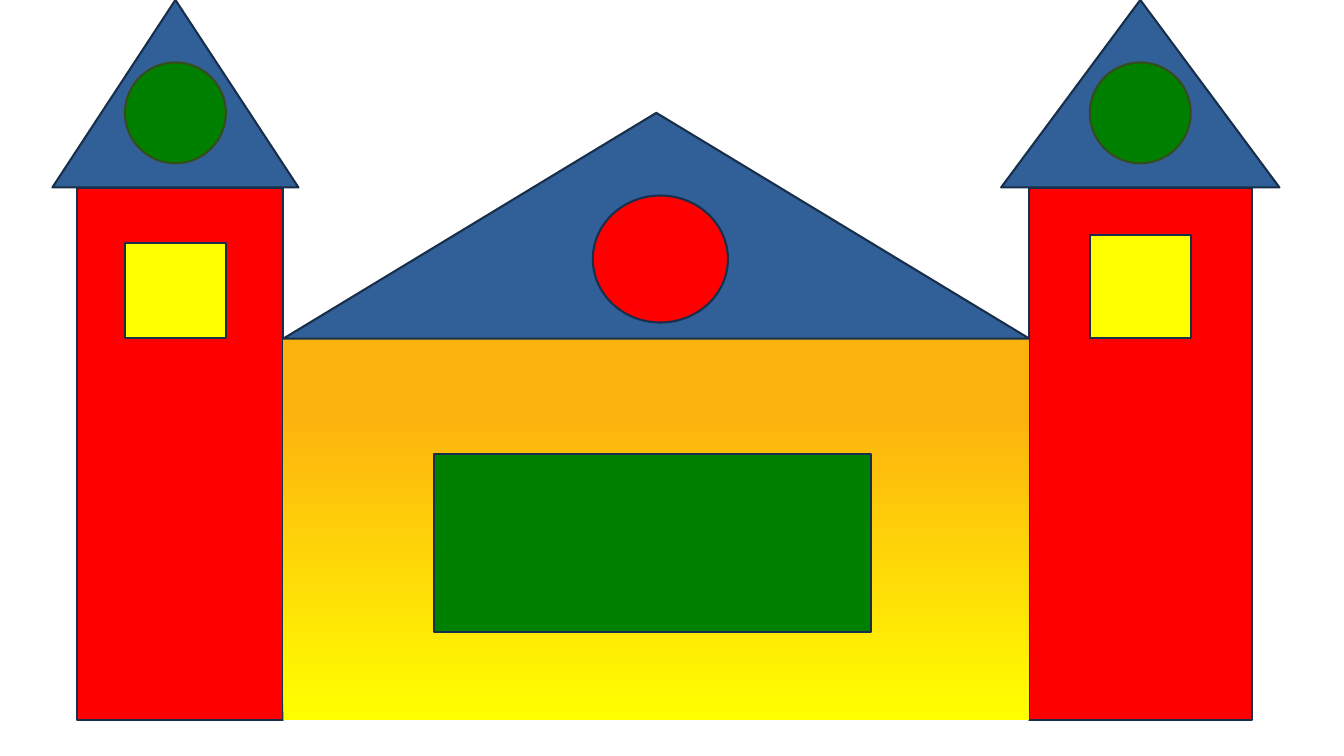
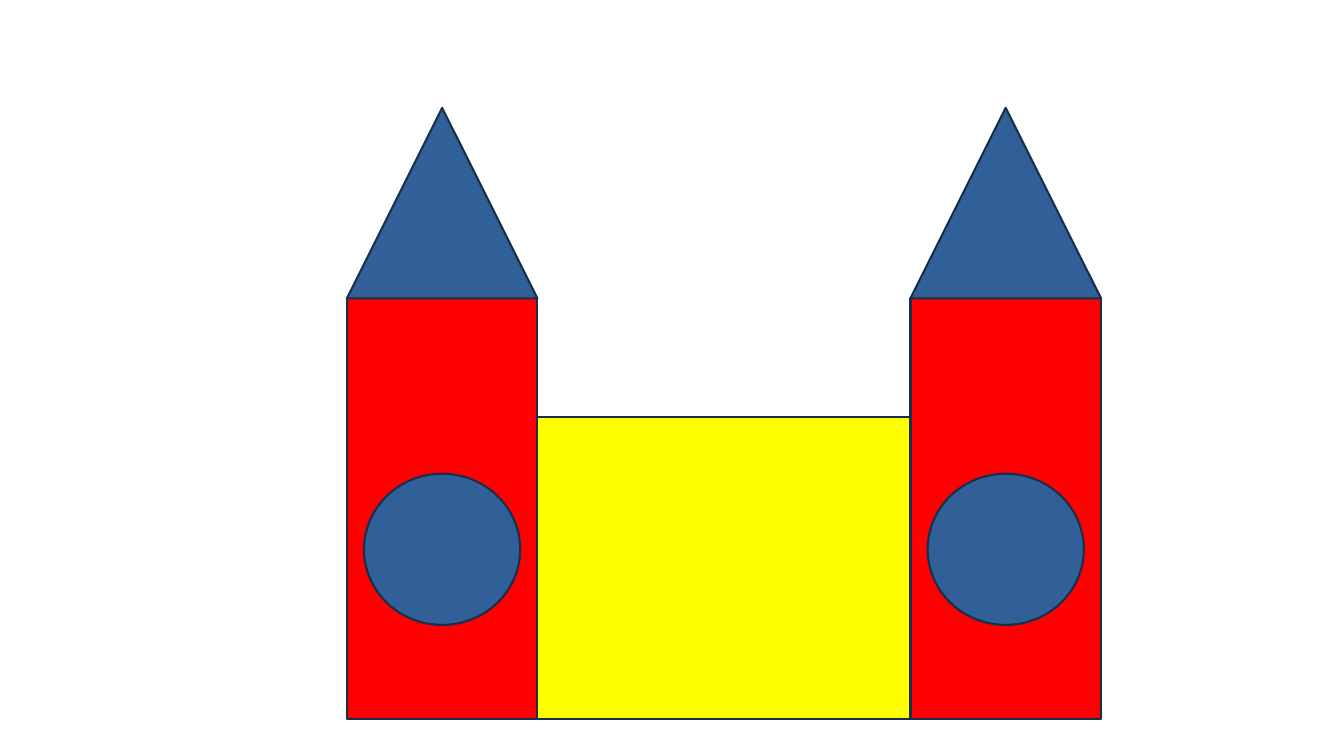
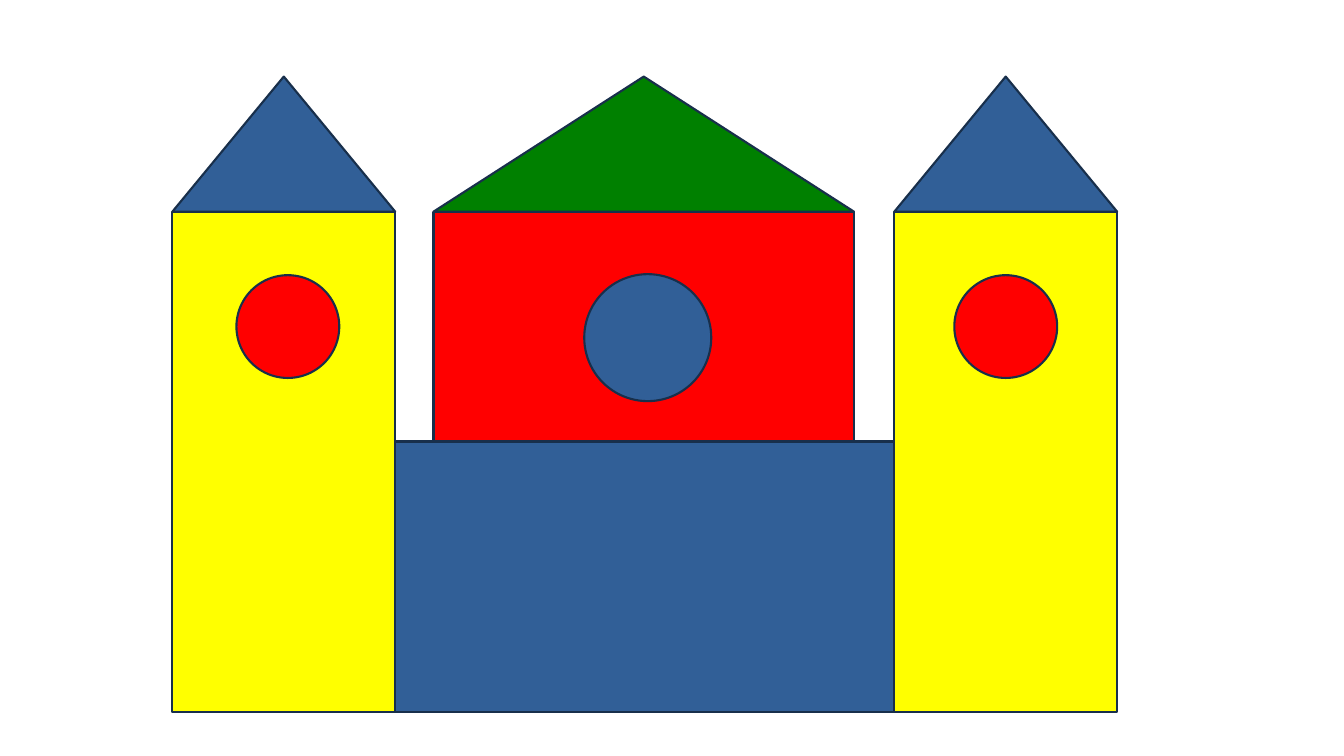
import copy
from dataclasses import dataclass

import pptx
import pptx.dml.color
import pptx.enum.shapes
import pptx.oxml.ns
import pptx.util
from pptx.util import Inches

KINDS = pptx.enum.shapes.MSO_SHAPE
BLOCK, ROOF, DISC = KINDS.RECTANGLE, KINDS.ISOSCELES_TRIANGLE, KINDS.OVAL


@dataclass(frozen=True)
class Theme:
    red: str = "FF0000"
    yellow: str = "FFFF00"
    blue: str = "315F97"
    green: str = "008000"
    outline: str = "182F4B"
    green_outline: str = "344D1B"
    line_width: float = 1.5
    # (position in percent, colour), from the ground upwards
    sunset: tuple = ((0, "FFFF00"), (80, "FDB30E"), (100, "FFB40E"))


T = Theme()


@dataclass
class Building:
    """A wall standing on the ground, with an optional roof and openings."""
    left: float
    width: float
    top: float
    base: float
    wall: object
    roof: tuple = ()       # colour, top, width
    axis: float = None     # centre of the roof and openings
    openings: tuple = ()   # kind, colour, shift from axis, top, width, height
    wall_line: str = T.outline


def wide_castle():
    ground, eaves = 7.14, 1.86
    disc = (DISC, T.green, 0, 0.62, 1, 1, T.green_outline)
    left = Building(0.76, 2.05, eaves, ground, T.red, (T.blue, 0, 2.44), 1.74,
                    (disc, (BLOCK, T.yellow, 0, 2.41, 1, 0.94)))
    right = Building(10.21, 2.21, eaves, ground, T.red, (T.blue, 0, 2.76), 11.31,
                     (disc, (BLOCK, T.yellow, 0, 2.33, 1, 1.02)))
    hall = between(left, right, 3.36, T.sunset, wall_line=None,
                   roof=(T.blue, 1.12, 7.4),
                   openings=((DISC, T.red, 0.04, 1.94, 1.34, 1.26),
                             (BLOCK, T.green, -0.04, 4.5, 4.33, 1.77)))
    return [left, right, hall]


def gate_castle():
    left, right = [Building(x, 1.89, 2.96, 7.13, T.red, (T.blue, 1.07, 1.89),
                            openings=((DISC, T.blue, 0, 4.7, 1.55, 1.5),))
                   for x in (3.44, 9.03)]
    return [left, between(left, right, 4.14, T.yellow), right]


def keep_castle():
    eaves, peak, terrace = 2.1, 0.76, 4.38
    left, right = [Building(x, 2.21, eaves, 7.06, T.yellow, (T.blue, peak, 2.21),
                            openings=((DISC, T.red, shift, 2.73, 1.02, 1.02),))
                   for x, shift in ((1.71, 0.04), (8.87, 0))]
    hall = between(left, right, terrace, T.blue)
    keep = Building(4.3, 4.17, eaves, terrace, T.red, (T.green, peak, 4.17),
                    openings=((DISC, T.blue, 0.04, 2.72, 1.26, 1.26),))
    return [hall, keep, left, right]


def between(left, right, top, wall, **extras):
    """A building that fills the gap between two towers."""
    start = left.left + left.width
    return Building(start, right.left - start, top, left.base, wall, **extras)


def rgb(value):
    return pptx.dml.color.RGBColor.from_string(value)


def fill_upwards(sp, stops):
    """Gradient from bottom to top with any number of stops."""
    sp.fill.gradient()
    sp.fill.gradient_angle = 90
    gs_list = sp._element.spPr.find(".//" + pptx.oxml.ns.qn("a:gsLst"))
    while len(gs_list) < len(stops):
        gs_list.append(copy.deepcopy(gs_list[-1]))
    for stop, (percent, colour) in zip(sp.fill.gradient_stops, stops):
        stop.position = percent / 100
        stop.color.rgb = rgb(colour)


def add_part(s, kind, fill, centre, top, width, height, line=T.outline):
    sp = s.shapes.add_shape(kind, Inches(centre - width / 2), Inches(top),
                            Inches(width), Inches(height))
    sp.shadow.inherit = False
    if isinstance(fill, tuple):
        fill_upwards(sp, fill)
    else:
        sp.fill.solid()
        sp.fill.fore_color.rgb = rgb(fill)
    if line:
        sp.line.color.rgb = rgb(line)
        sp.line.width = pptx.util.Pt(T.line_width)
    else:
        sp.line.fill.background()


def draw_building(s, b):
    middle = b.left + b.width / 2
    axis = middle if b.axis is None else b.axis
    add_part(s, BLOCK, b.wall, middle, b.top, b.width, b.base - b.top, b.wall_line)
    if b.roof:
        colour, peak, width = b.roof
        add_part(s, ROOF, colour, axis, peak, width, b.top - peak)
    for kind, colour, shift, *rest in b.openings:
        add_part(s, kind, colour, axis + shift, *rest)


def main():
    prs = pptx.Presentation()
    prs.slide_width, prs.slide_height = Inches(13.33), Inches(7.5)
    for castle in (wide_castle, gate_castle, keep_castle):
        s = prs.slides.add_slide(prs.slide_layouts[6])
        for building in castle():
            draw_building(s, building)
    prs.save("out.pptx")


if __name__ == "__main__":
    main()
